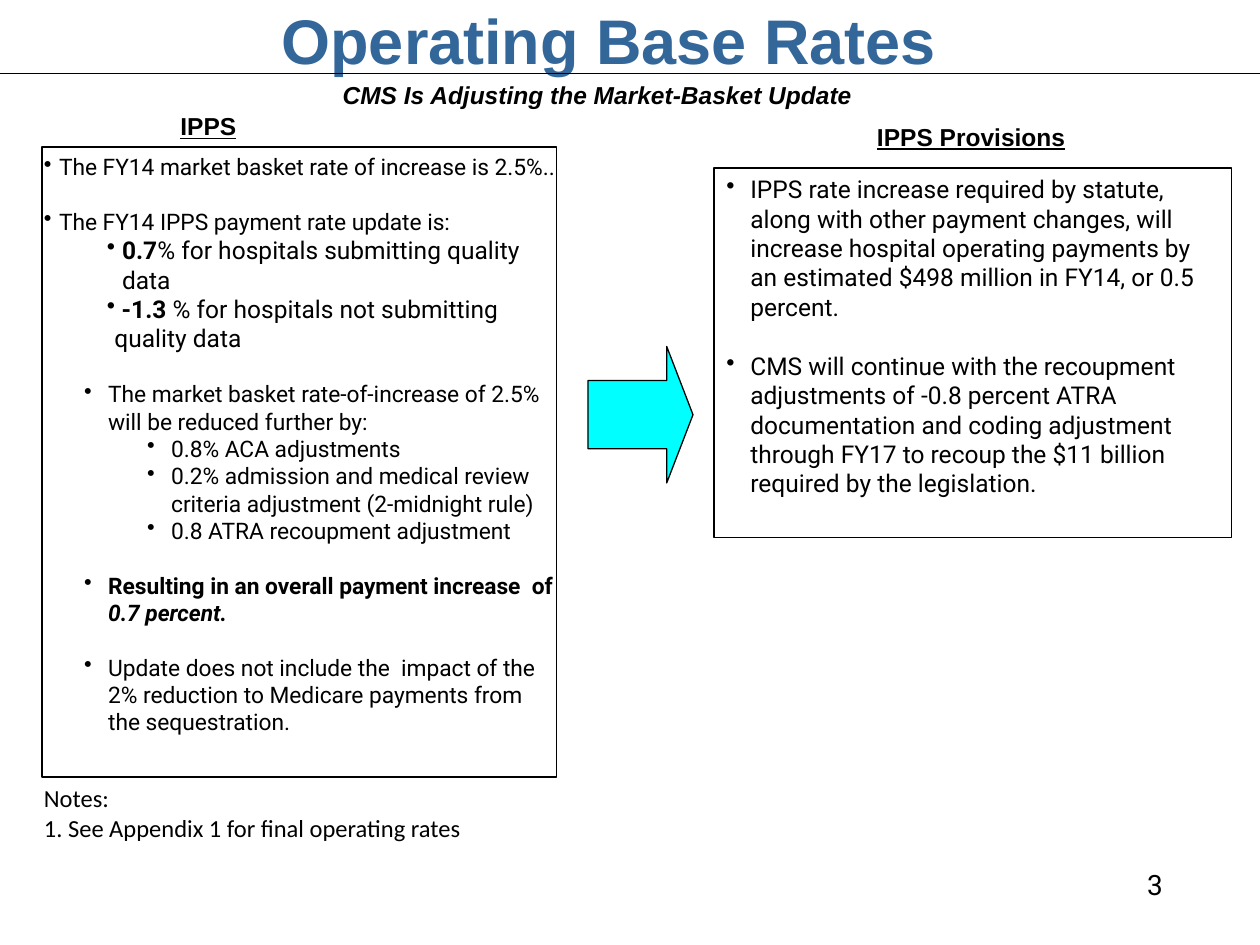
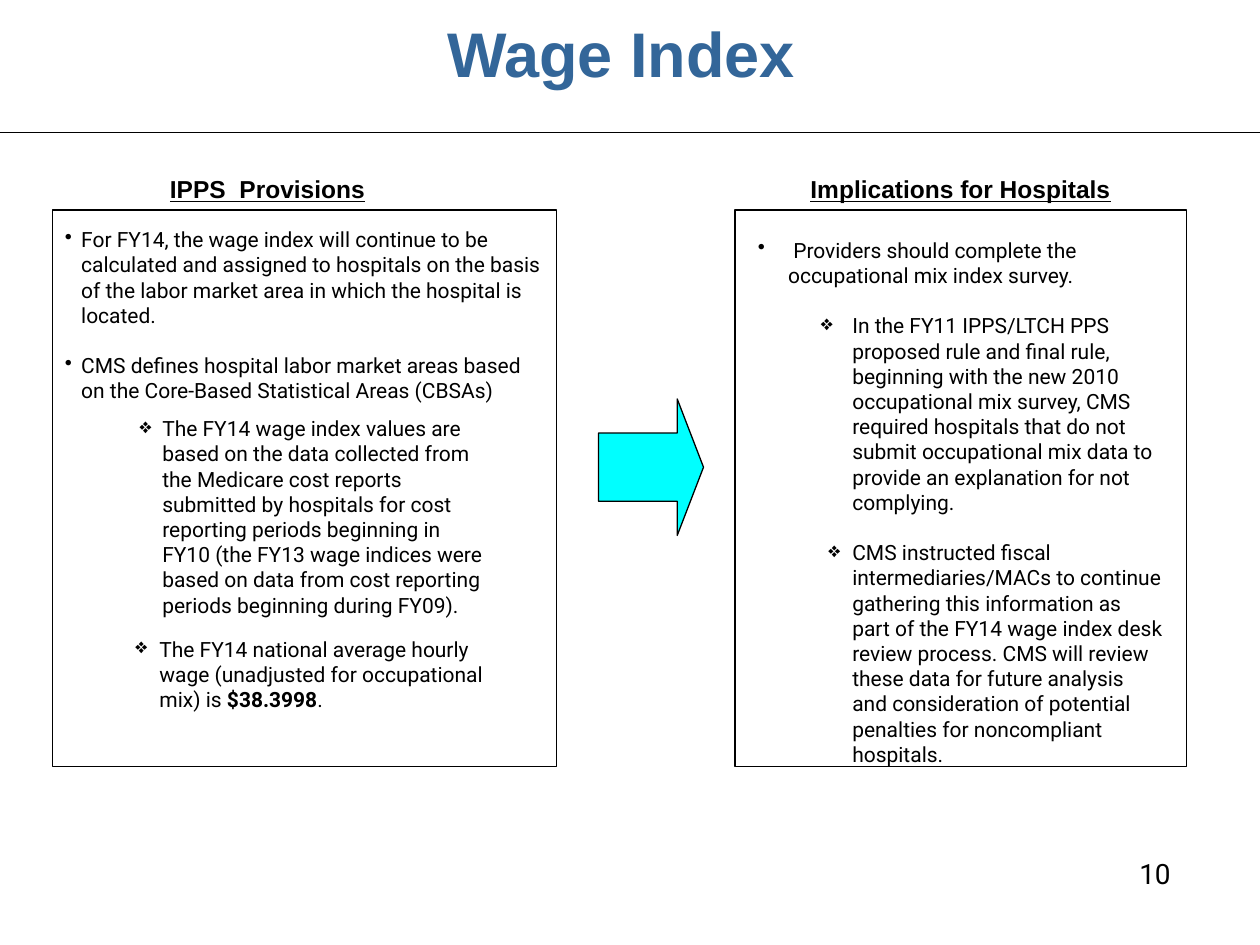
from collections import namedtuple

from lxml import etree
from pptx import Presentation
from pptx.dml.color import RGBColor
from pptx.enum.shapes import MSO_CONNECTOR, MSO_SHAPE
from pptx.enum.text import MSO_ANCHOR, PP_ALIGN
from pptx.oxml.ns import qn
from pptx.util import Emu, Inches, Pt

LEFT, CENTER = PP_ALIGN.LEFT, PP_ALIGN.CENTER
TOP, MIDDLE = MSO_ANCHOR.TOP, MSO_ANCHOR.MIDDLE
RECTANGLE, RIGHT_ARROW = MSO_SHAPE.RECTANGLE, MSO_SHAPE.RIGHT_ARROW
STRAIGHT = MSO_CONNECTOR.STRAIGHT
COLUMNS, ROWS = 120, 90
TITLE_ONLY = 5
DOT, DIAMOND = "•", "❖"

Item = namedtuple("Item", "runs left hang size gap bullet", defaults=(12, False, DOT))


def color(code):
    return RGBColor.from_string(code)


class Deck:
    """Holds the style, the grid and the current slide."""

    ink, accent, arrow_fill, paper = "000000", "336699", "00FFFF", "FFFFFF"
    heading_font, body_font, note_font = "Arial", "Roboto", "Calibri"
    line_width, line_height = Pt(0.75), 1.2

    def __init__(self):
        self.presentation = Presentation()
        self.presentation.slide_width = Inches(10)
        self.presentation.slide_height = Inches(7.5)
        self.slide = None

    def place(self, column, row, width, height):
        across = self.presentation.slide_width / COLUMNS
        down = self.presentation.slide_height / ROWS
        return [Emu(round(value)) for value in
                (column * across, row * down, width * across, height * down)]

    def style(self, paragraph, size, font, code=ink, bold=None, italic=None, underline=None):
        paragraph.font.name = font
        paragraph.font.size = Pt(size)
        paragraph.font.color.rgb = color(code)
        paragraph.font.bold = bold
        paragraph.font.italic = italic
        paragraph.font.underline = underline

    def start(self, title, at, rule_row):
        layout = self.presentation.slide_layouts[TITLE_ONLY]
        self.slide = self.presentation.slides.add_slide(layout)
        shape = self.slide.shapes.title
        shape.left, shape.top, shape.width, shape.height = self.place(*at)
        frame = shape.text_frame
        frame.text = title
        frame.vertical_anchor = MIDDLE
        frame.paragraphs[0].alignment = CENTER
        self.style(frame.paragraphs[0], 36, self.heading_font, self.accent, bold=True)
        self.rule(rule_row)

    def rule(self, row):
        left, top, width, _ = self.place(0, row, COLUMNS, 0)
        line = self.slide.shapes.add_connector(STRAIGHT, left, top, left + width, top)
        line.line.color.rgb = color(self.ink)
        line.line.width = self.line_width
        etree.SubElement(line._element.spPr, qn("a:effectLst"))

    def text(self, lines, at, size=14, font=heading_font, align=LEFT, **look):
        frame = self.slide.shapes.add_textbox(*self.place(*at)).text_frame
        frame.word_wrap = True
        frame.text = lines
        for paragraph in frame.paragraphs:
            paragraph.alignment = align
            self.style(paragraph, size, font, **look)

    def heading(self, words, at, align=LEFT):
        self.text(words, at, align=align, bold=True, underline=True)

    def page_number(self, number, at):
        self.text(number, at, 16, self.body_font, CENTER)

    def shape(self, kind, at, fill):
        shape = self.slide.shapes.add_shape(kind, *self.place(*at))
        shape.shadow.inherit = False
        shape.fill.solid()
        shape.fill.fore_color.rgb = color(fill)
        shape.line.color.rgb = color(self.ink)
        shape.line.width = self.line_width
        return shape

    def arrow(self, column, row):
        shape = self.shape(RIGHT_ARROW, (column, row, 10, 13), self.arrow_fill)
        shape.adjustments[0], shape.adjustments[1] = 0.5, 0.25

    def panel(self, at):
        return self.shape(RECTANGLE, at, self.paper)

    def bullets(self, items, at=None, shape=None):
        shape = shape or self.slide.shapes.add_textbox(*self.place(*at))
        frame = shape.text_frame
        frame.word_wrap = True
        frame.vertical_anchor = TOP
        for index, item in enumerate(items):
            paragraph = frame.add_paragraph() if index else frame.paragraphs[0]
            self.bullet(paragraph, item)

    def bullet(self, paragraph, item):
        properties = paragraph._p.get_or_add_pPr()
        properties.set("marL", str(Inches(item.left)))
        properties.set("indent", str(-Inches(item.hang)))
        etree.SubElement(properties, qn("a:buChar")).set("char", item.bullet)
        paragraph.alignment = LEFT
        if item.gap:
            paragraph.space_before = Pt(item.size * self.line_height)
        self.style(paragraph, item.size, self.body_font)
        runs = [(item.runs, "")] if isinstance(item.runs, str) else item.runs
        for words, marks in runs:
            run = paragraph.add_run()
            run.text = words
            if "b" in marks:
                run.font.bold = True
            if "i" in marks:
                run.font.italic = True


def operating_base_rates(deck):
    deck.start("Operating Base Rates", (4, 0, 108, 7.5), 7)
    deck.text("CMS Is Adjusting the Market-Basket Update", (30.4, 7, 53, 4),
              align=CENTER, bold=True, italic=True)
    deck.heading("IPPS", (16, 10, 20, 4))
    deck.heading("IPPS Provisions", (80, 11, 25, 4), CENTER)
    deck.arrow(56, 33)
    deck.bullets([
        Item("IPPS rate increase required by statute, along with other payment changes, "
             "will increase hospital operating payments by an estimated $498 million in "
             "FY14, or 0.5 percent.", 0.19, 0.19, 14),
        Item("CMS will continue with the recoupment adjustments of -0.8 percent ATRA "
             "documentation and coding adjustment through FY17 to recoup the $11 billion "
             "required by the legislation.", 0.19, 0.19, 14, True),
    ], shape=deck.panel((68, 16, 49.3, 35.2)))
    deck.panel((4, 14, 49, 60))
    deck.bullets([
        Item("The FY14 market basket rate of increase is 2.5%..", 0.12, 0.12, 13),
        Item("The FY14 IPPS payment rate update is:", 0.12, 0.12, 13, True),
        Item([("0.7", "b"), ("% for hospitals submitting quality data", "")],
             0.62, 0.12, 14),
        Item([(" ", ""), ("-1.3 ", "b"), ("% for hospitals not submitting quality data", "")],
             0.56, 0.06, 14),
        Item("The market basket rate-of-increase of 2.5% will be reduced further by:",
             0.51, 0.19, 13, True),
        Item("0.8% ACA adjustments", 1.01, 0.19, 13),
        Item("0.2% admission and medical review criteria adjustment (2-midnight rule)",
             1.01, 0.19, 13),
        Item("0.8 ATRA recoupment adjustment", 1.01, 0.19, 13),
        Item([("Resulting in an overall payment increase  of ", "b"), ("0.7 percent.", "bi")],
             0.51, 0.19, 13, True),
        Item("Update does not include the  impact of the 2% reduction to Medicare payments "
             "from the sequestration.", 0.51, 0.19, 13, True),
    ], (3, 14, 51, 60))
    deck.text("Notes:\n1. See Appendix 1 for final operating rates", (3, 74, 56, 7),
              font=deck.note_font)
    deck.page_number("3", (105, 82, 10, 8))


def wage_index(deck):
    deck.start("Wage Index ", (6, 1.2, 108, 7.5), 12.6)
    deck.heading("IPPS  Provisions", (15, 16, 21, 4))
    deck.heading("Implications for Hospitals", (76, 16, 32, 4))
    deck.arrow(57, 38)
    deck.panel((5, 20, 48, 53))
    deck.bullets([
        Item("For FY14, the wage index will continue to be calculated and assigned to "
             "hospitals on the basis of the labor market area in which the hospital is "
             "located.", 0.13, 0.13),
        Item("CMS defines hospital labor market areas based on the Core-Based Statistical "
             "Areas (CBSAs)", 0.13, 0.13, gap=True),
    ], (5, 21, 48, 18))
    deck.bullets([
        Item("The FY14 wage index values are based on the data collected from the Medicare "
             "cost reports submitted by hospitals for cost reporting periods beginning in "
             "FY10 (the FY13 wage indices were based on data from cost reporting periods "
             "beginning during FY09).", 0.69, 0.18, bullet=DIAMOND),
    ], (6, 39, 42, 20.6))
    deck.bullets([
        Item([("The FY14 national average hourly wage (unadjusted for occupational mix) is ", ""),
              ("$38.3998", "b"), (".", "")], 0.25, 0.19, bullet=DIAMOND),
    ], (11, 60, 39, 8.5))
    deck.panel((70, 20, 43, 53))
    deck.bullets([
        Item(" Providers should complete the occupational mix index survey.", 0.24, 0.24),
        Item("In the FY11 IPPS/LTCH PPS proposed rule and final rule, beginning with the new "
             "2010 occupational mix survey, CMS required hospitals that do not submit "
             "occupational mix data to provide an explanation for not complying.",
             0.75, 0.25, gap=True, bullet=DIAMOND),
        Item("CMS instructed fiscal intermediaries/MACs to continue gathering this "
             "information as part of the FY14 wage index desk review process. CMS will "
             "review these data for future analysis and consideration of potential "
             "penalties for noncompliant hospitals.", 0.75, 0.19, gap=True, bullet=DIAMOND),
    ], (71, 22, 41, 52))
    deck.page_number("10", (106, 81, 8, 9))


def main():
    deck = Deck()
    operating_base_rates(deck)
    wage_index(deck)
    deck.presentation.save("out.pptx")


if __name__ == "__main__":
    main()
